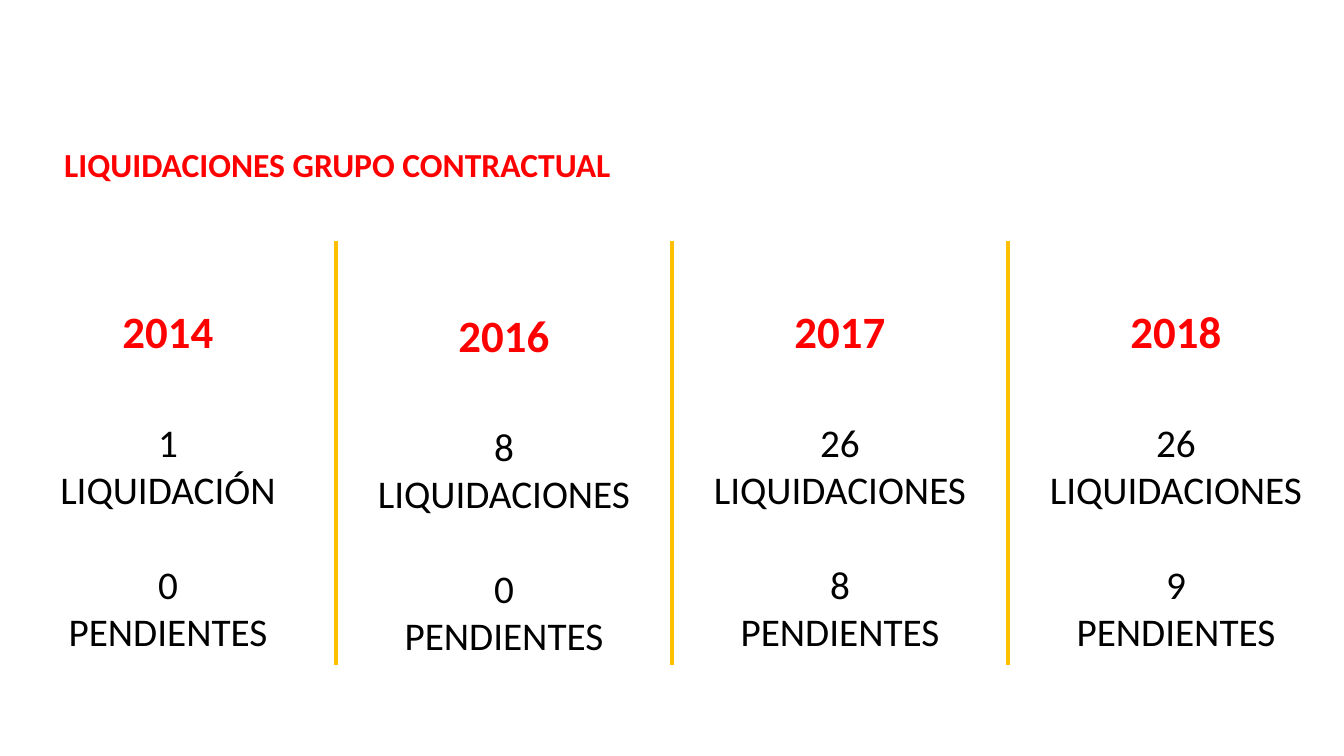
from lxml import etree
from pptx import Presentation
from pptx import util as u
from pptx.dml.color import RGBColor
from pptx.enum import shapes, text
from pptx.oxml.ns import qn

COLORS = {"heading": "FF0000", "body": "000000", "divider": "FFC000"}
FONT = "Calibri"
PAGE_WIDTH, PAGE_HEIGHT = 33.87, 19.05
DIVIDER_TOP, DIVIDER_BOTTOM = 6.07, 16.76

# Year, settled, label, pending, box top, box width (cm)
YEARS = [
    ("2014", "1", "LIQUIDACIÓN", "0", 7.52, 6.07),
    ("2016", "8", "LIQUIDACIONES", "0", 7.62, 7.26),
    ("2017", "26", "LIQUIDACIONES", "8", 7.52, 7.26),
    ("2018", "26", "LIQUIDACIONES", "9", 7.52, 7.26),
]


def add_text(page, left, top, width, height, lines, align):
    """Place lines of (wording, size, colour, bold, space before) in one box."""
    box = page.shapes.add_textbox(u.Cm(left), u.Cm(top), u.Cm(width), u.Cm(height))
    frame = box.text_frame
    frame.word_wrap = True
    frame.auto_size = text.MSO_AUTO_SIZE.SHAPE_TO_FIT_TEXT
    for index, (wording, size, color, bold, gap) in enumerate(lines):
        para = frame.add_paragraph() if index else frame.paragraphs[0]
        para.alignment = align
        if gap:
            para.space_before = u.Pt(gap)
        span = para.add_run()
        span.text = wording
        span.font.name = FONT
        span.font.size = u.Pt(size)
        span.font.bold = bold
        span.font.color.rgb = RGBColor.from_string(COLORS[color])


def add_title(page, left, top, width, height):
    line = ("LIQUIDACIONES GRUPO CONTRACTUAL", 24, "heading", True, 0)
    add_text(page, left, top, width, height, [line], text.PP_ALIGN.LEFT)


def add_divider(page, x, top, bottom):
    line = page.shapes.add_connector(
        shapes.MSO_CONNECTOR.STRAIGHT, u.Cm(x), u.Cm(top), u.Cm(x), u.Cm(bottom))
    line.line.color.rgb = RGBColor.from_string(COLORS["divider"])
    line.line.width = u.Pt(2.25)
    etree.SubElement(line._element.spPr, qn("a:effectLst"))


def add_year(page, left, column_width, year, settled, label, pending, top, width):
    """Centre one year's figures in its column."""
    lines = [
        (year, 32, "heading", True, 0),
        (settled, 28, "body", False, 44),
        (label, 28, "body", False, 0),
        (pending, 28, "body", False, 34),
        ("PENDIENTES", 28, "body", False, 0),
    ]
    add_text(page, left + (column_width - width) / 2, top, width, 9.14,
             lines, text.PP_ALIGN.CENTER)


def main():
    deck = Presentation()
    deck.slide_width, deck.slide_height = u.Cm(PAGE_WIDTH), u.Cm(PAGE_HEIGHT)
    page = deck.slides.add_slide(deck.slide_layouts[6])
    add_title(page, 1.37, 3.51, 20.62, 1.27)
    column_width = PAGE_WIDTH / len(YEARS)
    for index, figures in enumerate(YEARS):
        left = index * column_width
        if index:
            add_divider(page, left, DIVIDER_TOP, DIVIDER_BOTTOM)
        add_year(page, left, column_width, *figures)
    deck.save("out.pptx")


if __name__ == "__main__":
    main()
